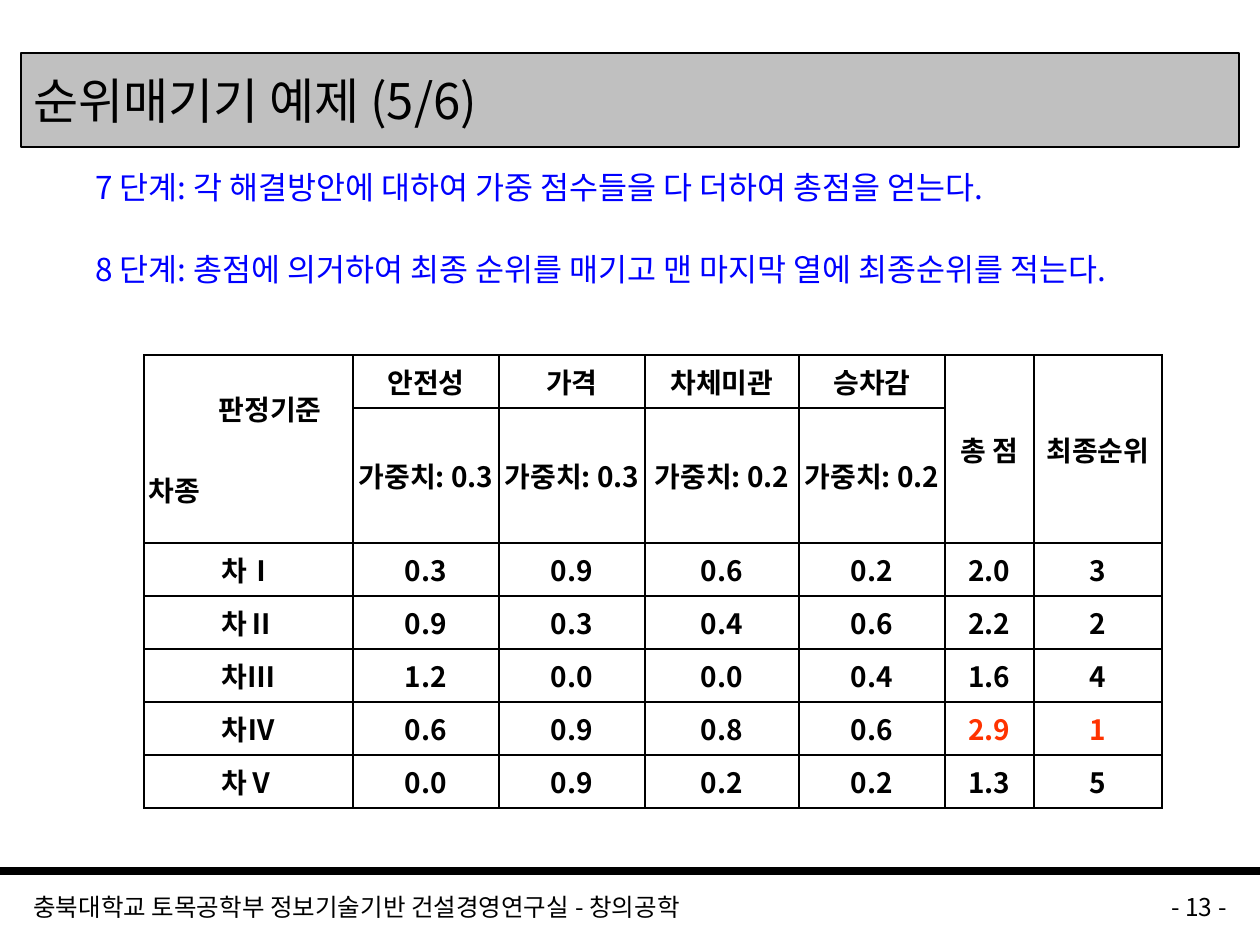
from dataclasses import dataclass

from lxml.etree import SubElement
from pptx import Presentation
from pptx.dml.color import RGBColor
from pptx.enum.shapes import MSO_CONNECTOR, MSO_SHAPE
from pptx.enum.text import MSO_ANCHOR, PP_ALIGN
from pptx.oxml.ns import qn
from pptx.util import Emu, Pt

EMU_PER_PX = 914400 / 126


@dataclass(frozen=True)
class Theme:
    font: str = "Noto Sans CJK KR"
    black: str = "000000"
    blue: str = "0000FF"
    red: str = "FF3300"
    grey: str = "C0C0C0"
    title_size: int = 28
    step_size: int = 18
    table_size: int = 16
    footer_size: int = 14


@dataclass(frozen=True)
class Line:
    text: str
    size: int
    color: str = Theme.black
    bold: bool = False
    align: PP_ALIGN = PP_ALIGN.LEFT
    indent: int = 0  # px
    before: int = 0  # pt


@dataclass(frozen=True)
class TextBox:
    left: int
    top: int
    width: int
    height: int
    lines: tuple[Line, ...]


THEME = Theme()
STEPS = (
    Line("7 단계: 각 해결방안에 대하여 가중 점수들을 다 더하여 총점을 얻는다.",
         THEME.step_size, THEME.blue, indent=63),
    Line("8 단계: 총점에 의거하여 최종 순위를 매기고 맨 마지막 열에 최종순위를 적는다.",
         THEME.step_size, THEME.blue, indent=63, before=25),
)
TEXT_BOXES = (
    TextBox(20, 168, 1218, 116, STEPS),
    TextBox(21, 892, 987, 32, (
        Line("충북대학교 토목공학부 정보기술기반 건설경영연구실 - 창의공학", THEME.footer_size),)),
    TextBox(1029, 892, 210, 32, (
        Line("- 13 -", THEME.footer_size, align=PP_ALIGN.RIGHT),)),
)

TABLE_LEFT, TABLE_TOP = 144, 355
COLUMN_WIDTHS = (209, 146, 146, 154, 146, 89, 128)
ROW_HEIGHTS = (53, 135) + (53,) * 5
MERGED_COLUMNS = (0, 5, 6)
CORNER = (
    Line("판정기준", THEME.table_size, bold=True, indent=70),
    Line("차종", THEME.table_size, bold=True, before=23),
)
ROWS = (
    ("", "안전성", "가격", "차체미관", "승차감", "총 점", "최종순위"),
    ("", "가중치: 0.3", "가중치: 0.3", "가중치: 0.2", "가중치: 0.2", "", ""),
    ("차Ⅰ", "0.3", "0.9", "0.6", "0.2", "2.0", "3"),
    ("차Ⅱ", "0.9", "0.3", "0.4", "0.6", "2.2", "2"),
    ("차Ⅲ", "1.2", "0.0", "0.0", "0.4", "1.6", "4"),
    ("차Ⅳ", "0.6", "0.9", "0.8", "0.6", "2.9", "1"),
    ("차Ⅴ", "0.0", "0.9", "0.2", "0.2", "1.3", "5"),
)
WINNER_CELLS = ((5, 5), (5, 6))


def px(length: int) -> Emu:
    return Emu(round(length * EMU_PER_PX))


def write_lines(frame, lines: tuple[Line, ...]) -> None:
    for index, line in enumerate(lines):
        para = frame.paragraphs[0] if index == 0 else frame.add_paragraph()
        para.text = line.text
        para.alignment = line.align
        para.space_before = Pt(line.before)
        para.font.name = THEME.font
        para.font.size = Pt(line.size)
        para.font.bold = line.bold
        para.font.color.rgb = RGBColor.from_string(line.color)
        properties = para._p.get_or_add_pPr()
        properties.set("marL", str(px(line.indent)))
        properties.set("indent", "0")
        # Korean text takes the East Asian typeface
        SubElement(properties.find(qn("a:defRPr")), qn("a:ea"), typeface=THEME.font)


def add_text_box(page, spec: TextBox) -> None:
    box = page.shapes.add_textbox(px(spec.left), px(spec.top), px(spec.width), px(spec.height))
    frame = box.text_frame
    frame.word_wrap = True
    frame.margin_top = frame.margin_bottom = 0
    write_lines(frame, spec.lines)


def add_title(page) -> None:
    bar = page.shapes.add_shape(MSO_SHAPE.RECTANGLE, px(21), px(53), px(1218), px(94))
    bar.shadow.inherit = False
    bar.fill.solid()
    bar.fill.fore_color.rgb = RGBColor.from_string(THEME.grey)
    bar.line.color.rgb = RGBColor.from_string(THEME.black)
    bar.line.width = Pt(0.75)
    bar.text_frame.vertical_anchor = MSO_ANCHOR.MIDDLE
    write_lines(bar.text_frame, (Line("순위매기기 예제 (5/6)", THEME.title_size),))


def add_footer_rule(page) -> None:
    rule = page.shapes.add_connector(MSO_CONNECTOR.STRAIGHT, 0, px(871), px(1260), px(871))
    rule.line.color.rgb = RGBColor.from_string(THEME.black)
    rule.line.width = Pt(4.5)
    SubElement(rule._element.spPr, qn("a:effectLst"))


def style_cell(cell) -> None:
    cell.vertical_anchor = MSO_ANCHOR.MIDDLE
    cell.margin_left = cell.margin_right = px(5)
    cell.margin_top = cell.margin_bottom = px(6)
    properties = cell._tc.get_or_add_tcPr()
    for side in ("lnL", "lnR", "lnT", "lnB"):
        border = SubElement(properties, qn(f"a:{side}"), w=str(Pt(1)))
        fill = SubElement(border, qn("a:solidFill"))
        SubElement(fill, qn("a:srgbClr"), val=THEME.black)
    cell.fill.background()


def add_score_table(page) -> None:
    frame = page.shapes.add_table(
        len(ROWS), len(COLUMN_WIDTHS), px(TABLE_LEFT), px(TABLE_TOP),
        px(sum(COLUMN_WIDTHS)), px(sum(ROW_HEIGHTS)))
    table = frame.table
    table.first_row = table.horz_banding = False
    for column, width in zip(table.columns, COLUMN_WIDTHS):
        column.width = px(width)
    for row, height in zip(table.rows, ROW_HEIGHTS):
        row.height = px(height)
    for column in MERGED_COLUMNS:
        table.cell(0, column).merge(table.cell(1, column))
    for row, texts in enumerate(ROWS):
        for column, text in enumerate(texts):
            cell = table.cell(row, column)
            style_cell(cell)
            if text:
                color = THEME.red if (row, column) in WINNER_CELLS else THEME.black
                write_lines(cell.text_frame, (
                    Line(text, THEME.table_size, color, True, PP_ALIGN.CENTER),))
    write_lines(table.cell(0, 0).text_frame, CORNER)


def main() -> None:
    deck = Presentation()
    deck.slide_width, deck.slide_height = px(1260), px(945)
    page = deck.slides.add_slide(deck.slide_layouts[6])
    add_footer_rule(page)
    add_title(page)
    for spec in TEXT_BOXES:
        add_text_box(page, spec)
    add_score_table(page)
    deck.save("out.pptx")


if __name__ == "__main__":
    main()
